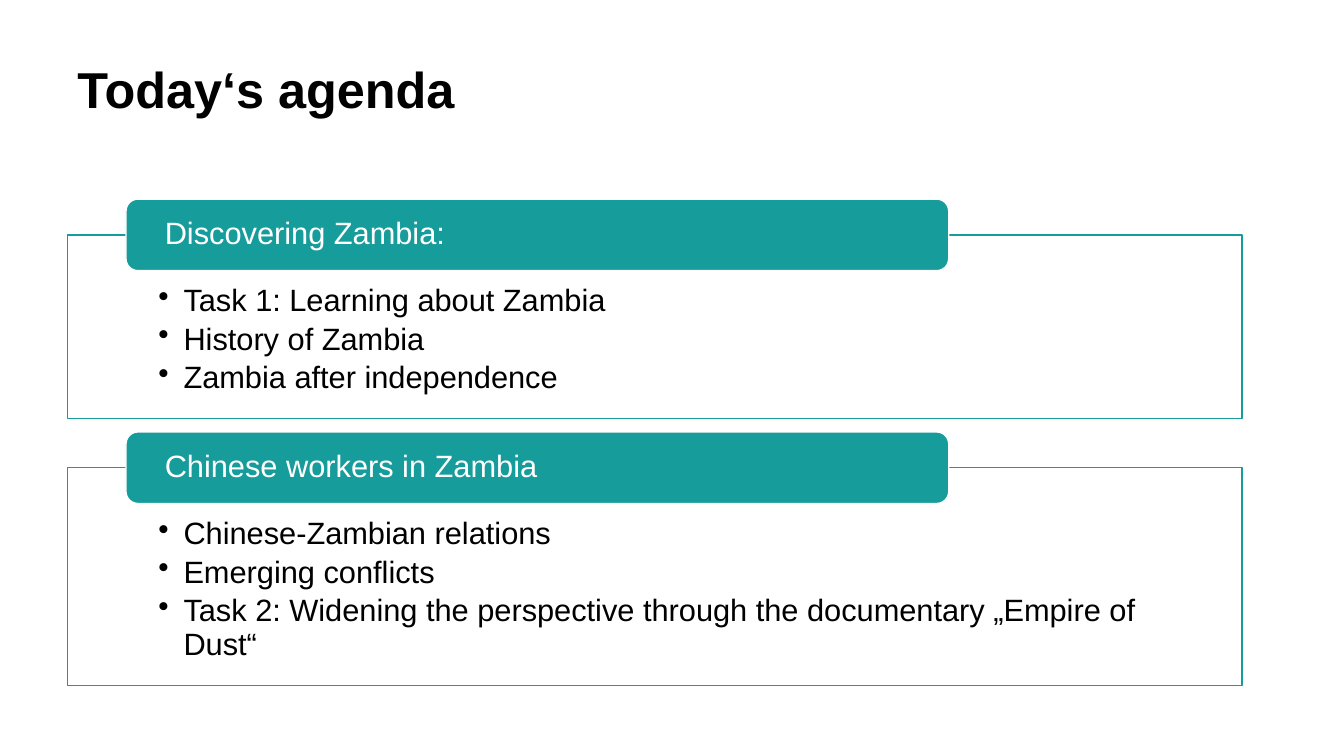
from lxml import etree
from pptx import Presentation
from pptx import util as u
from pptx.dml import color
from pptx.enum import shapes, text
from pptx.oxml import ns

TEAL, WHITE, BLACK = "169C9A", "FFFFFF", "000000"
LEFT, WIDTH = 0.67, 11.65
HEADER_HEIGHT = 0.71
SECTIONS = [
    (2.33, 1.82, "Discovering Zambia:",
     ["Task 1: Learning about Zambia", "History of Zambia", "Zambia after independence"]),
    (4.64, 2.16, "Chinese workers in Zambia",
     ["Chinese-Zambian relations", "Emerging conflicts",
      "Task 2: Widening the perspective through the documentary „Empire of Dust“"]),
]


def rgb(value):
    return color.RGBColor.from_string(value)


def apply(target, values):
    for name, value in values.items():
        setattr(target, name, value)


class AgendaSlide:
    """Draws the agenda's elements on one slide in a shared style."""

    def __init__(self, slide, font="Arial", accent=TEAL):
        self.slide, self.font, self.accent = slide, font, accent

    def wording(self, shape, lines, size, ink, insets, anchor, bold=False, space=0):
        frame = shape.text_frame
        sides = ("margin_left", "margin_top", "margin_right", "margin_bottom")
        apply(frame, {"word_wrap": True, "vertical_anchor": anchor,
                      **{side: u.Inches(inset) for side, inset in zip(sides, insets)}})
        frame.text = "\n".join(lines)
        for line in frame.paragraphs:
            apply(line, {"alignment": text.PP_ALIGN.LEFT, "line_spacing": 0.9,
                         "space_after": u.Pt(space)})
            for run in line.runs:
                apply(run.font, {"name": self.font, "size": u.Pt(size), "bold": bold})
                run.font.color.rgb = rgb(ink)
        return frame.paragraphs

    def title(self, words):
        title = self.slide.shapes.add_textbox(*map(u.Inches, (LEFT, 0.6, WIDTH, 1.24)))
        self.wording(title, [words], 36, BLACK, (0.1, 0.05, 0.1, 0.05),
                     text.MSO_ANCHOR.TOP, bold=True)

    def block(self, kind, place, fill, outline):
        block = self.slide.shapes.add_shape(kind, *map(u.Inches, place))
        block.shadow.inherit = False
        block.fill.solid()
        block.fill.fore_color.rgb = rgb(fill)
        block.line.color.rgb = rgb(outline)
        block.line.width = u.Pt(1)
        return block

    def panel(self, top, height, topics):
        panel = self.block(shapes.MSO_SHAPE.RECTANGLE, (LEFT, top, WIDTH, height),
                           WHITE, self.accent)
        tint = panel._element.spPr.find(ns.qn("a:solidFill"))[0]
        etree.SubElement(tint, ns.qn("a:alpha"), val="90000")
        for topic in self.wording(panel, topics, 22, BLACK, (0.9, 0.5, 0.9, 0.17),
                                  text.MSO_ANCHOR.TOP, space=3.8):
            topic.level = 1
            layout = topic._p.get_or_add_pPr()
            layout.set("marL", str(u.Inches(0.25)))
            layout.set("indent", str(u.Inches(-0.25)))
            etree.SubElement(layout, ns.qn("a:buChar"), char="•")

    def header(self, middle, words):
        header = self.block(shapes.MSO_SHAPE.ROUNDED_RECTANGLE,
                            (1.25, middle - HEADER_HEIGHT / 2, 8.16, HEADER_HEIGHT),
                            self.accent, WHITE)
        self.wording(header, [words], 22, WHITE, (0.35, 0, 0.35, 0), text.MSO_ANCHOR.MIDDLE)


def main():
    deck = Presentation()
    apply(deck, {"slide_width": u.Inches(13.33), "slide_height": u.Inches(7.5)})
    agenda = AgendaSlide(deck.slides.add_slide(deck.slide_layouts[6]))
    agenda.title("Today‘s agenda")
    for top, height, heading, topics in SECTIONS:
        agenda.panel(top, height, topics)
        agenda.header(top, heading)
    deck.save("out.pptx")


if __name__ == "__main__":
    main()
